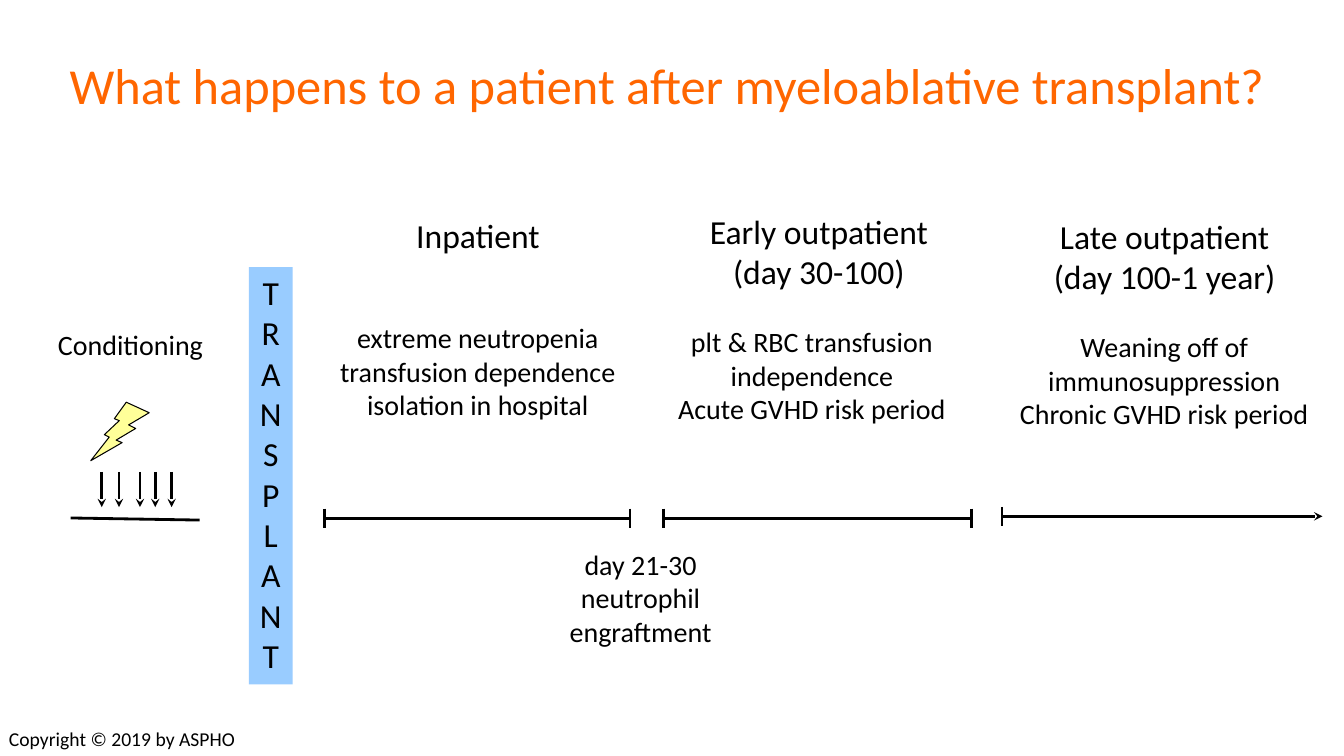
"""Build the slide on the course after a myeloablative transplant."""
from dataclasses import dataclass

from lxml import etree
from pptx import Presentation
from pptx import util as u
from pptx.dml.color import RGBColor
from pptx.enum import shapes, text
from pptx.oxml.ns import qn


@dataclass(frozen=True)
class Theme:
    """Hold the colours and type sizes of the slide."""
    font: str = "Calibri"
    ink: str = "000000"
    accent: str = "FF6600"
    band: str = "99CCFF"
    bolt: str = "FFFF99"
    title: int = 36
    heading: int = 24
    body: int = 20
    small: int = 14
    stroke: float = 2
    outline: float = 0.75


class Timeline:
    """Draw the elements of one slide in a shared style."""

    def __init__(self, page, theme):
        """Keep the page and its theme."""
        self.page = page
        self.theme = theme

    def set_text(self, frame, lines, size, align, color):
        """Fill a text frame and format its runs."""
        frame.text = "\n".join(lines)
        for para in frame.paragraphs:
            para.alignment = align
            for span in para.runs:
                span.font.name = self.theme.font
                span.font.size = u.Pt(size)
                span.font.color.rgb = RGBColor.from_string(color)

    def title(self, words, area):
        """Place and format the title placeholder."""
        box = self.page.shapes.title
        box.left, box.top, box.width, box.height = map(u.Pt, area)
        frame = box.text_frame
        self.set_text(frame, [words], self.theme.title,
                      text.PP_ALIGN.LEFT, self.theme.accent)
        frame.auto_size = text.MSO_AUTO_SIZE.NONE
        frame.vertical_anchor = text.MSO_ANCHOR.MIDDLE
        frame.paragraphs[0].line_spacing = 0.9

    def label(self, lines, area, size, align=text.PP_ALIGN.CENTER, wrap=True):
        """Add a text box."""
        box = self.page.shapes.add_textbox(*map(u.Pt, area))
        box.text_frame.word_wrap = wrap
        self.set_text(box.text_frame, lines, size, align, self.theme.ink)

    def shape(self, kind, area, fill, outline=None):
        """Add a filled preset shape."""
        box = self.page.shapes.add_shape(kind, *map(u.Pt, area))
        box.shadow.inherit = False
        box.fill.solid()
        box.fill.fore_color.rgb = RGBColor.from_string(fill)
        if outline:
            box.line.color.rgb = RGBColor.from_string(self.theme.ink)
            box.line.width = u.Pt(outline)
        else:
            box.line.fill.background()
        return box

    def band(self, word, area):
        """Add a narrow band whose word wraps letter by letter."""
        box = self.shape(shapes.MSO_SHAPE.RECTANGLE, area, self.theme.band)
        box.text_frame.word_wrap = True
        box.text_frame.vertical_anchor = text.MSO_ANCHOR.TOP
        self.set_text(box.text_frame, [word], self.theme.heading,
                      text.PP_ALIGN.CENTER, self.theme.ink)

    def bolt(self, area):
        """Add a mirrored lightning bolt."""
        box = self.shape(shapes.MSO_SHAPE.LIGHTNING_BOLT, area,
                         self.theme.bolt, self.theme.outline)
        box.element.spPr.find(qn("a:xfrm")).set("flipH", "1")

    def line(self, x1, y1, x2, y2, arrow=False):
        """Add a straight line, with a stealth arrowhead on request."""
        rule = self.page.shapes.add_connector(
            shapes.MSO_CONNECTOR.STRAIGHT, *map(u.Pt, (x1, y1, x2, y2)))
        rule.line.color.rgb = RGBColor.from_string(self.theme.ink)
        rule.line.width = u.Pt(self.theme.stroke)
        properties = rule.element.spPr
        if arrow:
            etree.SubElement(properties.find(qn("a:ln")), qn("a:tailEnd"),
                             type="stealth")
        etree.SubElement(properties, qn("a:effectLst"))

    def period(self, start, end, y, is_open=False):
        """Add a time span, capped at both ends or open to the right."""
        self.line(start, y, end, y, arrow=is_open)
        for x in [start] if is_open else [start, end]:
            self.line(x, y - 6.8, x, y + 6.8)


def main():
    """Build and save the deck."""
    deck = Presentation()
    deck.slide_width, deck.slide_height = u.Pt(960), u.Pt(540)
    theme = Theme()
    page = deck.slides.add_slide(deck.slide_layouts[5])
    timeline = Timeline(page, theme)
    timeline.title("What happens to a patient after myeloablative transplant?",
                   (42.5, 28.8, 888.5, 67.7))

    timeline.label(["Conditioning"], (33.8, 230.4, 118.8, 31.5), theme.body,
                   wrap=False)
    timeline.bolt((64.8, 287.3, 41.8, 41.8))
    for x in (72.7, 85, 100, 110.9, 122.6):
        timeline.line(x, 337, x, 362.2, arrow=True)
    timeline.line(50.4, 370, 142.6, 371.5)
    timeline.band("TRANSPLANT", (177.8, 190.8, 31.2, 298.1))

    timeline.label(["Inpatient"], (290.2, 149.8, 104.4, 36), theme.heading,
                   text.PP_ALIGN.LEFT, wrap=False)
    headings = [
        (["Early outpatient", "(day 30-100)"], 496.1, 146.9),
        (["Late outpatient", "(day 100-1 year)"], 743, 150.5),
    ]
    for lines, left, top in headings:
        timeline.label(lines, (left, top, 177.8, 65.5), theme.heading)

    details = [
        (["extreme neutropenia", "transfusion dependence",
          "isolation in hospital"], 223.2, 225.4, 236.2),
        (["plt & RBC transfusion", "independence",
          "Acute GVHD risk period"], 470.9, 228.2, 218.2),
        (["Weaning off of immunosuppression",
          "Chronic GVHD risk period"], 716.4, 231.8, 230.4),
    ]
    for lines, left, top, width in details:
        timeline.label(lines, (left, top, width, 79.9), theme.body)

    timeline.period(231.8, 450, 370.2)
    timeline.period(473.8, 694.1, 370.2)
    timeline.period(715.7, 944.6, 368.8, is_open=True)
    timeline.label(["day 21-30", "neutrophil", "engraftment"],
                   (398.9, 387.4, 117.4, 79.9), theme.body, wrap=False)
    timeline.label(["Copyright © 2019 by ASPHO"], (-0.7, 515.5, 178.6, 24.5),
                   theme.small, text.PP_ALIGN.LEFT)
    deck.save("out.pptx")


if __name__ == "__main__":
    main()
